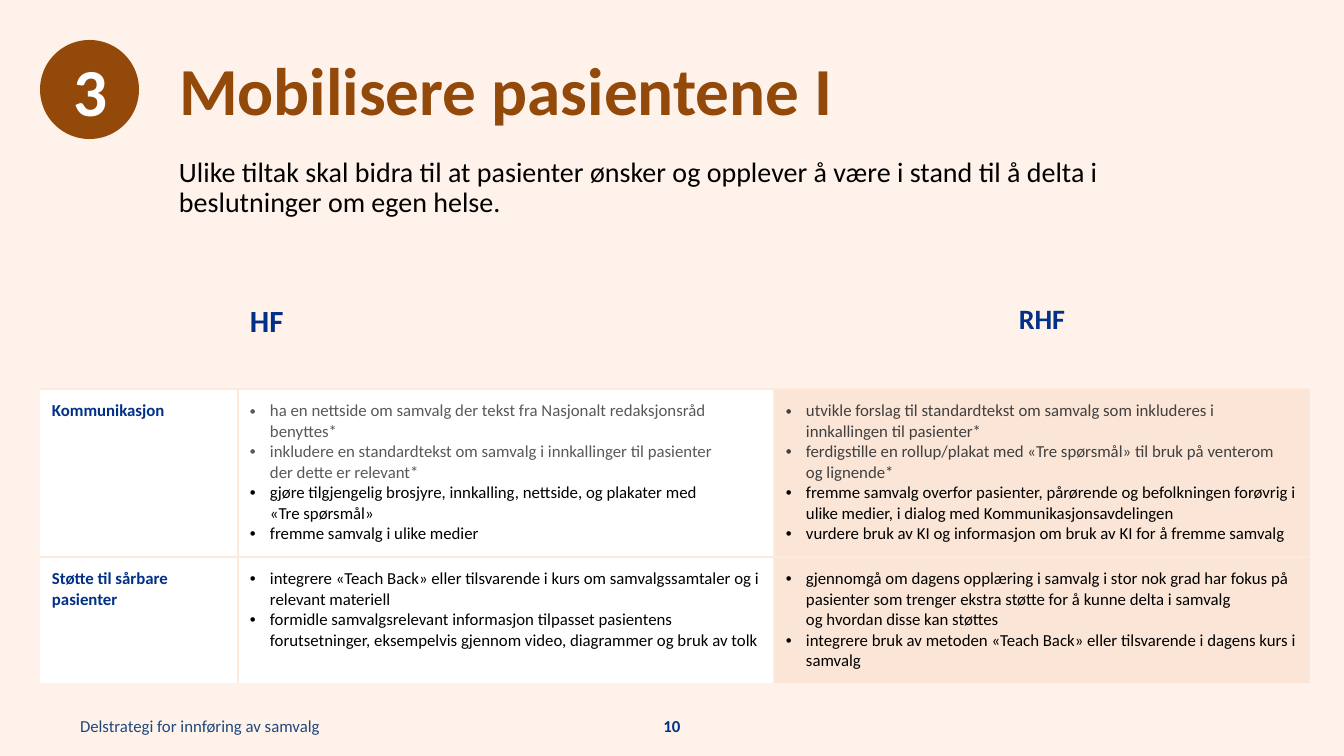
from copy import deepcopy
from dataclasses import dataclass

from lxml import etree
from pptx import Presentation
from pptx.dml.color import RGBColor
from pptx.enum.shapes import MSO_SHAPE
from pptx.enum.text import MSO_ANCHOR, MSO_AUTO_SIZE, PP_ALIGN
from pptx.oxml.ns import qn
from pptx.util import Emu, Pt

OVAL = MSO_SHAPE.OVAL
TOP, MIDDLE = MSO_ANCHOR.TOP, MSO_ANCHOR.MIDDLE
LEFT, CENTER = PP_ALIGN.LEFT, PP_ALIGN.CENTER
NO_FIT = MSO_AUTO_SIZE.NONE

CREAM = RGBColor(0xFF, 0xF2, 0xEA)
PEACH = RGBColor(0xFB, 0xE5, 0xD6)
RULE = RGBColor(0xFD, 0xEA, 0xDA)
BROWN = RGBColor(0x92, 0x49, 0x09)
NAVY = RGBColor(0x00, 0x30, 0x87)
PAGE_BLUE = RGBColor(0x00, 0x33, 0x88)
FOOTER_BLUE = RGBColor(0x1F, 0x49, 0x7D)
GREY = RGBColor(0x59, 0x59, 0x59)
DARK_GREY = RGBColor(0x40, 0x40, 0x40)
WHITE = RGBColor(0xFF, 0xFF, 0xFF)
BLACK = RGBColor(0, 0, 0)

FONT = "Calibri"
NO_STYLE_NO_GRID = "{2D5ABB26-0587-4C30-8999-92F81FD0307C}"
COLUMN_WIDTHS = (198, 536, 536)
ROW_HEIGHTS = (98, 168, 126)
CELL_MARGIN = 12
BULLET_INDENT = 20


def px(n: int) -> Emu:
    return Emu(round(n * 914400 / 100.8))


@dataclass
class Line:
    text: str
    color: RGBColor = BLACK
    size: int = 12
    bold: bool = False
    bullet: bool = False
    align: PP_ALIGN = LEFT
    spacing: float = 1.0


@dataclass
class Cell:
    lines: list[Line]
    fill: RGBColor


def heading(text: str, size: int = 12, align: PP_ALIGN = LEFT) -> list[Line]:
    return [Line(text, NAVY, size, True, align=align)]


def bullets(*items: str, muted: int = 0, muted_color: RGBColor = GREY) -> list[Line]:
    """Make bulleted lines, the first `muted` of them in the muted colour."""
    return [Line(item, muted_color if i < muted else BLACK, bullet=True)
            for i, item in enumerate(items)]


ROWS = (
    (Cell([], CREAM), Cell(heading("HF", 22), CREAM), Cell(heading("RHF", 20, CENTER), CREAM)),
    (
        Cell(heading("Kommunikasjon"), WHITE),
        Cell(bullets(
            "ha en nettside om samvalg der tekst fra Nasjonalt redaksjonsråd benyttes*",
            "inkludere en standardtekst om samvalg i innkallinger til pasienter \nder dette er relevant*",
            "gjøre tilgjengelig brosjyre, innkalling, nettside, og plakater med \n«Tre spørsmål»",
            "fremme samvalg i ulike medier",
            muted=2), WHITE),
        Cell(bullets(
            "utvikle forslag til standardtekst om samvalg som inkluderes i innkallingen til pasienter*",
            "ferdigstille en rollup/plakat med «Tre spørsmål» til bruk på venterom \nog lignende*",
            "fremme samvalg overfor pasienter, pårørende og befolkningen forøvrig i ulike medier, "
            "i dialog med Kommunikasjonsavdelingen",
            "vurdere bruk av KI og informasjon om bruk av KI for å fremme samvalg",
            muted=2, muted_color=DARK_GREY), PEACH),
    ),
    (
        Cell(heading("Støtte til sårbare pasienter"), WHITE),
        Cell(bullets(
            "integrere «Teach Back» eller tilsvarende i kurs om samvalgssamtaler og i relevant materiell",
            "formidle samvalgsrelevant informasjon tilpasset pasientens forutsetninger, "
            "eksempelvis gjennom video, diagrammer og bruk av tolk"), WHITE),
        Cell(bullets(
            "gjennomgå om dagens opplæring i samvalg i stor nok grad har fokus på pasienter "
            "som trenger ekstra støtte for å kunne delta i samvalg \nog hvordan disse kan støttes",
            "integrere bruk av metoden «Teach Back» eller tilsvarende i dagens kurs i samvalg"), PEACH),
    ),
)


def write(tf, lines: list[Line]) -> None:
    for i, line in enumerate(lines):
        p = tf.add_paragraph() if i else tf.paragraphs[0]
        p.text = line.text
        p.alignment = line.align
        p.line_spacing = line.spacing
        p.space_before = Pt(0)
        if line.bullet:
            pPr = p._p.get_or_add_pPr()
            pPr.set("marL", str(px(BULLET_INDENT)))
            pPr.set("indent", str(-px(BULLET_INDENT)))
            etree.SubElement(pPr, qn("a:buFont"), typeface="Arial")
            etree.SubElement(pPr, qn("a:buChar"), char="•")
        for r in p.runs:
            for name, value in {"name": FONT, "size": Pt(line.size), "bold": line.bold}.items():
                setattr(r.font, name, value)
            r.font.color.rgb = line.color
        for br in p._p.findall(qn("a:br")):
            br.insert(0, deepcopy(p.runs[0]._r.rPr))


def format_frame(sp, line: Line, margins: tuple[int, int, int, int], anchor: MSO_ANCHOR) -> None:
    """Set margins (left, top, right, bottom), anchor and text of a shape."""
    tf = sp.text_frame
    sides = ("margin_left", "margin_top", "margin_right", "margin_bottom")
    settings = {side: px(m) for side, m in zip(sides, margins)}
    settings |= {"word_wrap": True, "auto_size": NO_FIT, "vertical_anchor": anchor}
    for name, value in settings.items():
        setattr(tf, name, value)
    write(tf, [line])


def add_text(slide, box: tuple[int, int, int, int], line: Line,
             margins: tuple[int, int, int, int] = (0, 0, 0, 0),
             anchor: MSO_ANCHOR = MIDDLE) -> None:
    format_frame(slide.shapes.add_textbox(*map(px, box)), line, margins, anchor)


def add_borders(cell, sides: list[str]) -> None:
    tcPr = cell._tc.get_or_add_tcPr()
    for side in sides:
        ln = etree.SubElement(tcPr, qn(f"a:ln{side}"), w=str(Pt(2.25)))
        fill = etree.SubElement(ln, qn("a:solidFill"))
        etree.SubElement(fill, qn("a:srgbClr"), val=str(RULE))


def add_measures_table(slide) -> None:
    frame = slide.shapes.add_table(len(ROWS), len(COLUMN_WIDTHS), px(40), px(291),
                                   px(sum(COLUMN_WIDTHS)), px(sum(ROW_HEIGHTS)))
    table = frame.table
    table.first_row = table.horz_banding = False
    table._tbl.tblPr.find(qn("a:tableStyleId")).text = NO_STYLE_NO_GRID
    for column, width in zip(table.columns, COLUMN_WIDTHS):
        column.width = px(width)
    for row, height in zip(table.rows, ROW_HEIGHTS):
        row.height = px(height)
    for i, row in enumerate(ROWS):
        for j, content in enumerate(row):
            cell = table.cell(i, j)
            for side in ("left", "top", "right", "bottom"):
                setattr(cell, f"margin_{side}", px(CELL_MARGIN))
            ruled = {"L": i > 0 and j == 1, "R": i > 0 and j == 0,
                     "T": i > 0, "B": i < len(ROWS) - 1}
            add_borders(cell, [side for side, shown in ruled.items() if shown])
            cell.fill.solid()
            cell.fill.fore_color.rgb = content.fill
            write(cell.text_frame, content.lines)


def add_number_badge(slide) -> None:
    sp = slide.shapes.add_shape(OVAL, px(40), px(40), px(99), px(99))
    sp.shadow.inherit = False
    sp.fill.solid()
    sp.fill.fore_color.rgb = BROWN
    sp.line.fill.background()
    format_frame(sp, Line("3", WHITE, 48, True, align=CENTER), (12, 5, 10, 5), MIDDLE)


def main() -> None:
    prs = Presentation()
    prs.slide_width, prs.slide_height = px(1344), px(756)
    slide = prs.slides.add_slide(prs.slide_layouts[5])
    slide.background.fill.solid()
    slide.background.fill.fore_color.rgb = CREAM

    title = slide.shapes.title
    title.left, title.top, title.width, title.height = map(px, (179, 57, 1090, 80))
    format_frame(title, Line("Mobilisere pasientene I", BROWN, 48, True, spacing=0.9),
                 (0, 0, 0, 0), TOP)
    add_text(slide, (179, 158, 921, 70),
             Line("Ulike tiltak skal bidra til at pasienter ønsker og opplever å være i stand til "
                  "å delta i beslutninger om egen helse.", size=20, spacing=0.9), anchor=TOP)
    add_number_badge(slide)
    add_measures_table(slide)
    add_text(slide, (80, 710, 311, 32),
             Line("Delstrategi for innføring av samvalg", FOOTER_BLUE), (0, 5, 10, 5))
    add_text(slide, (628, 710, 88, 32),
             Line("10", PAGE_BLUE, bold=True, align=CENTER), (10, 5, 10, 5))
    prs.save("out.pptx")


if __name__ == "__main__":
    main()
